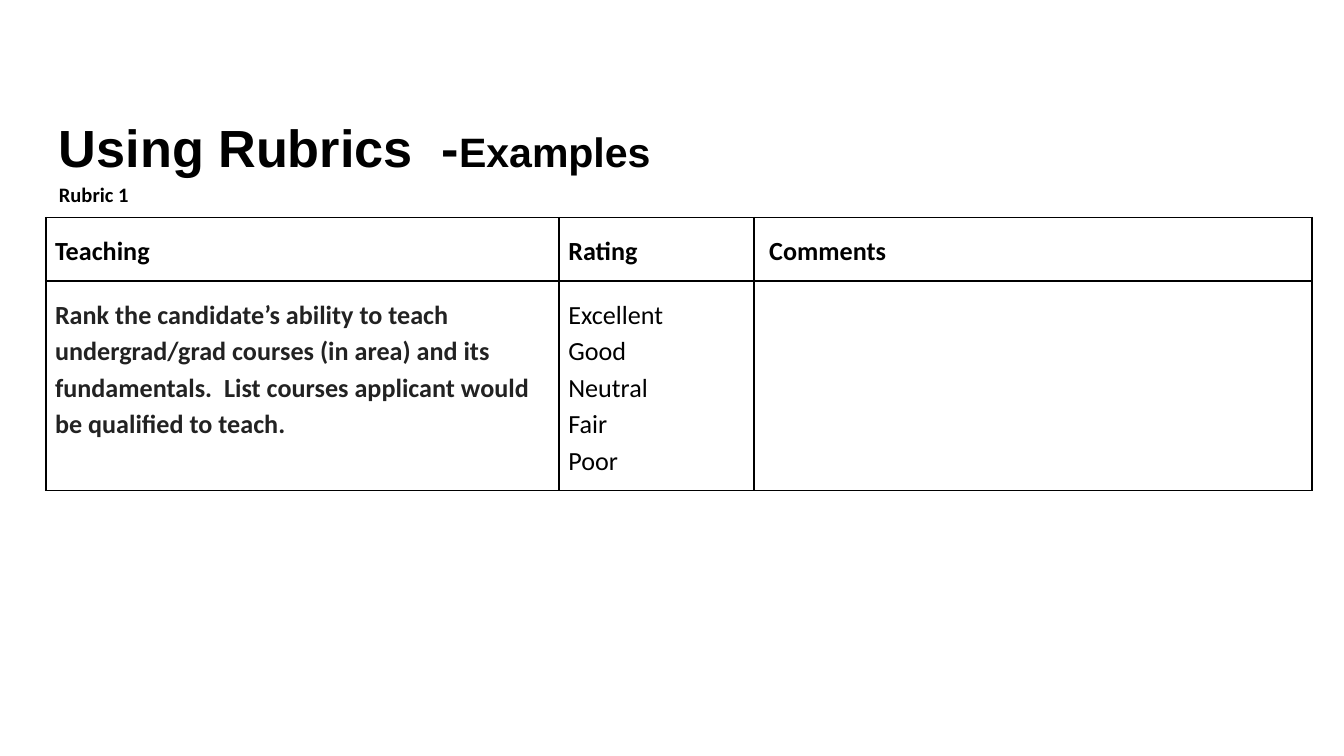
import dataclasses

import lxml.etree
import pptx
import pptx.dml.color
import pptx.enum.text
import pptx.oxml.ns
import pptx.util

Pt = pptx.util.Pt


@dataclasses.dataclass(frozen=True)
class Theme:
    """Colours, fonts and type sizes of the slide."""
    black: str = "000000"
    dark_gray: str = "222222"
    heading_font: str = "Arial"
    body_font: str = "Calibri"
    title_size: int = 28
    subtitle_size: int = 22
    label_size: int = 11
    cell_size: int = 14
    line_spacing: float = 1.15


THEME = Theme()


def style_font(font, name, size, color, bold=True):
    """Apply typeface, size, colour and weight to a font."""
    font.name = name
    font.size = Pt(size)
    font.bold = bold
    font.color.rgb = pptx.dml.color.RGBColor.from_string(color)


def add_text_box(slide, left, top, width, height, anchor):
    """Add a wrapping text box and return its first paragraph."""
    frame = slide.shapes.add_textbox(Pt(left), Pt(top), Pt(width), Pt(height)).text_frame
    frame.word_wrap = True
    frame.vertical_anchor = anchor
    frame.margin_left = frame.margin_right = Pt(7.2)
    frame.margin_top = frame.margin_bottom = Pt(7.2)
    return frame.paragraphs[0]


def add_title(slide):
    """Add the title with its smaller second part."""
    paragraph = add_text_box(slide, 24.5, 51, 671, 45.5, pptx.enum.text.MSO_ANCHOR.TOP)
    paragraph.line_spacing = 1.1
    for text, size in (("Using Rubrics  -", THEME.title_size), ("Examples", THEME.subtitle_size)):
        run = paragraph.add_run()
        run.text = text
        style_font(run.font, THEME.heading_font, size, THEME.black)


def add_label(slide, text):
    """Add the label above the table."""
    paragraph = add_text_box(slide, 24.5, 85.7, 235.5, 35.3, pptx.enum.text.MSO_ANCHOR.MIDDLE)
    paragraph.text = text
    paragraph.line_spacing = THEME.line_spacing
    style_font(paragraph.font, THEME.body_font, THEME.label_size, THEME.black)


def add_borders(cell):
    """Draw a thin line on all four sides of a cell."""
    properties = cell._tc.get_or_add_tcPr()
    for index, side in enumerate(("lnL", "lnR", "lnT", "lnB")):
        line = lxml.etree.Element(pptx.oxml.ns.qn(f"a:{side}"), w=str(Pt(1)))
        fill = lxml.etree.SubElement(line, pptx.oxml.ns.qn("a:solidFill"))
        lxml.etree.SubElement(fill, pptx.oxml.ns.qn("a:srgbClr"), val=THEME.black)
        properties.insert(index, line)


def fill_cell(cell, text, color, bold):
    """Write and format one table cell."""
    cell.fill.background()
    add_borders(cell)
    cell.margin_left = cell.margin_right = Pt(5)
    cell.margin_top = cell.margin_bottom = Pt(7.2)
    cell.text = text
    for paragraph in cell.text_frame.paragraphs:
        paragraph.line_spacing = THEME.line_spacing
        style_font(paragraph.font, THEME.body_font, THEME.cell_size, color, bold)


def add_rubric_table(slide, rows, widths, heights):
    """Add the rubric table from rows of (text, colour, bold) cells."""
    table = slide.shapes.add_table(
        len(rows), len(widths), Pt(24.5), Pt(116.6), Pt(sum(widths)), Pt(sum(heights))
    ).table
    table.first_row = table.horz_banding = False
    for column, width in zip(table.columns, widths):
        column.width = Pt(width)
    for row, height, contents in zip(table.rows, heights, rows):
        row.height = Pt(height)
        for cell, content in zip(row.cells, contents):
            fill_cell(cell, *content)


def main():
    """Build the slide and save it."""
    presentation = pptx.Presentation()
    presentation.slide_width = Pt(720)
    presentation.slide_height = Pt(405)
    slide = presentation.slides.add_slide(presentation.slide_layouts[6])
    question = (
        "Rank the candidate’s ability to teach undergrad/grad courses (in area) and its "
        "fundamentals.  List courses applicant would be qualified to teach."
    )
    ratings = "\n".join(("Excellent", "Good", "Neutral", "Fair", "Poor"))
    rows = (
        [(text, THEME.black, True) for text in ("Teaching", "Rating", " Comments")],
        [(question, THEME.dark_gray, True), (ratings, THEME.black, False), ("", THEME.black, False)],
    )
    add_title(slide)
    add_rubric_table(slide, rows, widths=(275, 104.4, 299), heights=(34, 112.3))
    add_label(slide, "Rubric 1")
    presentation.save("out.pptx")


if __name__ == "__main__":
    main()
